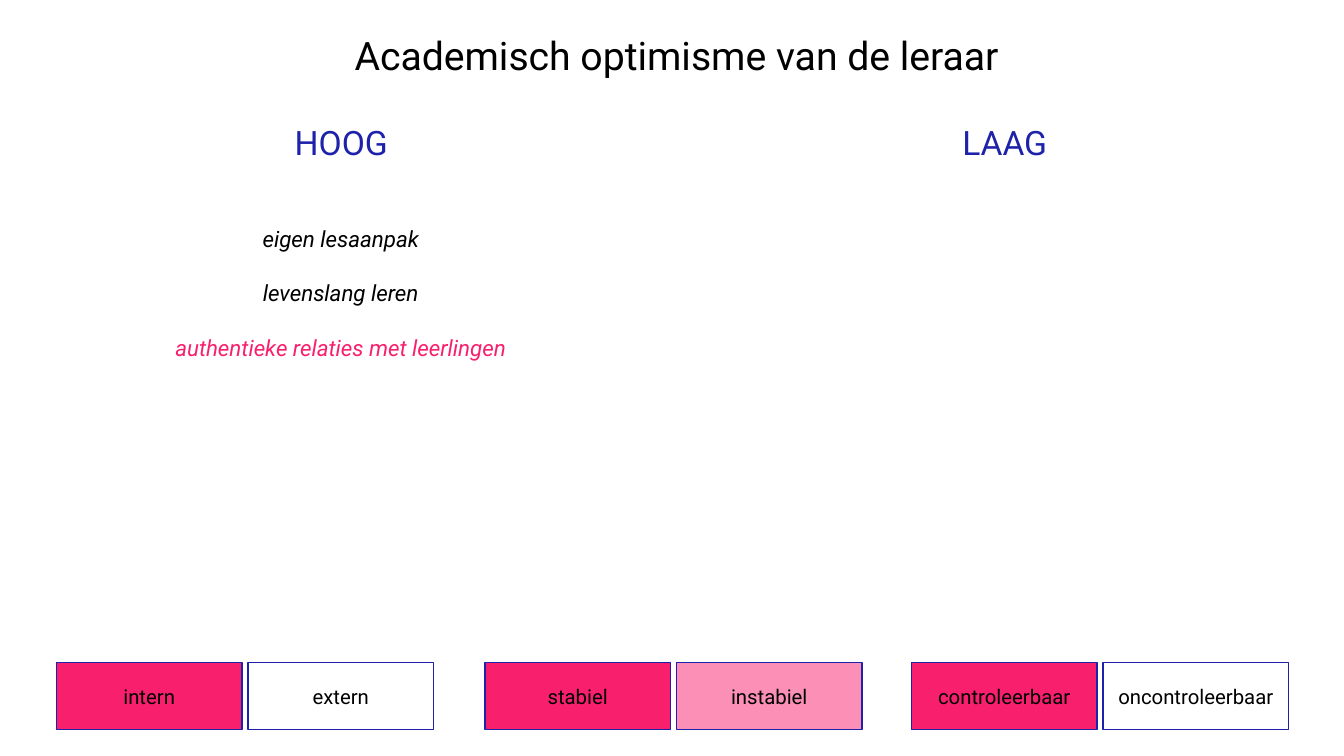
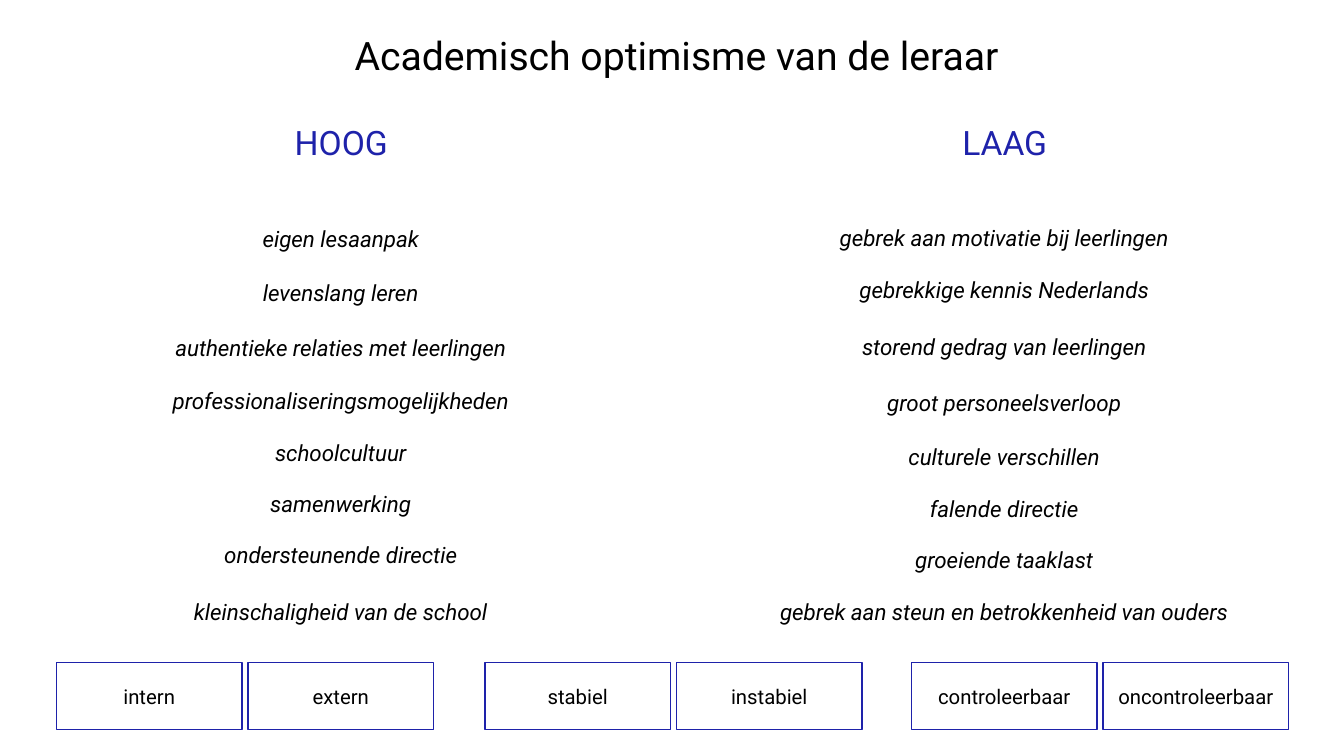
from pptx import Presentation
from pptx.dml.color import RGBColor
from pptx.enum.shapes import MSO_SHAPE as Shape
from pptx.enum.text import MSO_ANCHOR as Anchor, MSO_AUTO_SIZE as Fit, PP_ALIGN as Align
from pptx.oxml.ns import qn
from pptx.util import Pt
from lxml.etree import SubElement

PX = 9144  # 100 px to the inch
BLACK = RGBColor(0, 0, 0)
WHITE = RGBColor(255, 255, 255)
BLUE = RGBColor(0x1E, 0x22, 0xAA)
PINK = RGBColor(0xF8, 0x20, 0x6D)

# Content
TITLE = "Academisch optimisme van de leraar"
HIGH = [
    (218, "eigen lesaanpak"),
    (272, "levenslang leren"),
    (326, "authentieke relaties met leerlingen"),
    (379, "professionaliseringsmogelijkheden"),
    (430, "schoolcultuur"),
    (481, "samenwerking"),
    (532, "ondersteunende directie"),
    (588, "kleinschaligheid van de school"),
]
LOW = [
    (217, "gebrek aan motivatie bij leerlingen"),
    (269, "gebrekkige kennis Nederlands"),
    (325, "storend gedrag van leerlingen"),
    (381, "groot personeelsverloop"),
    (434, "culturele verschillen"),
    (486, "falende directie"),
    (537, "groeiende taaklast"),
    (588, "gebrek aan steun en betrokkenheid van ouders"),
]
PAIRS = [
    (56, ("intern", "extern")),
    (481, ("stabiel", "instabiel")),
    (904, ("controleerbaar", "oncontroleerbaar")),
]
# Each slide: items per column, pink item, tag -> opacity in percent
SLIDES = [
    {"high": HIGH[:3], "low": [], "hot": HIGH[2][1],
     "tags": {"intern": 100, "stabiel": 100, "instabiel": 50, "controleerbaar": 100}},
    {"high": HIGH, "low": LOW, "hot": None, "tags": {}},
]

# Layout
HEADS = [("HOOG", "high", 338), ("LAAG", "low", 996)]
HEAD_W, ITEM_W, ITEM_H = 195, 580, 37
TAG_W, TAG_H, TAG_Y, STEP = 184, 67, 657, 190

# Text styles
HEAD = {"size": Pt(24), "color": BLUE}
NAME = {"size": Pt(28), "color": BLACK}
ITEM = {"size": Pt(16), "color": BLACK, "italic": True}
TAG = {"size": Pt(14.5), "color": BLACK}


def write(shape, text, style, anchor=Anchor.MIDDLE):
    frame = shape.text_frame
    frame.word_wrap = True
    frame.vertical_anchor = anchor
    para = frame.paragraphs[0]
    para.alignment = Align.CENTER
    run = para.add_run()
    run.text = text
    run.font.name = "Roboto"
    for key, value in style.items():
        if key == "color":
            run.font.color.rgb = value
        else:
            setattr(run.font, key, value)


def label(slide, rect, text, style, anchor=Anchor.MIDDLE):
    box = slide.shapes.add_textbox(*(v * PX for v in rect))
    write(box, text, style, anchor)
    box.text_frame.auto_size = Fit.SHAPE_TO_FIT_TEXT


def block(slide, rect, text, style, fill, line, alpha=100):
    box = slide.shapes.add_shape(Shape.RECTANGLE, *(v * PX for v in rect))
    box.shadow.inherit = False
    box.fill.solid()
    box.fill.fore_color.rgb = fill
    box.line.color.rgb = line
    box.line.width = Pt(1)
    if alpha < 100:
        color = box.fill._xPr.find(qn("a:solidFill")).find(qn("a:srgbClr"))
        SubElement(color, qn("a:alpha")).set("val", str(alpha * 1000))
    write(box, text, style)


def build(deck, page):
    slide = deck.slides.add_slide(deck.slide_layouts[6])
    # Title, heads and their items
    label(slide, (302, 26, 738, 57), TITLE, NAME, Anchor.TOP)
    for head, key, mid in HEADS:
        block(slide, (mid - HEAD_W // 2, 96, HEAD_W, 90), head, HEAD, WHITE, WHITE)
        for top, text in page[key]:
            style = {**ITEM, "color": PINK} if text == page["hot"] else ITEM
            label(slide, (mid - ITEM_W // 2, top, ITEM_W, ITEM_H), text, style)
    # Tag pairs along the foot
    for left, pair in PAIRS:
        for i, text in enumerate(pair):
            alpha = page["tags"].get(text, 0)
            rect = (left + i * STEP, TAG_Y, TAG_W, TAG_H)
            block(slide, rect, text, TAG, PINK if alpha else WHITE, BLUE, alpha or 100)


def main():
    deck = Presentation()
    deck.slide_width, deck.slide_height = 1333 * PX, 750 * PX
    for page in SLIDES:
        build(deck, page)
    deck.save("out.pptx")


if __name__ == "__main__":
    main()
